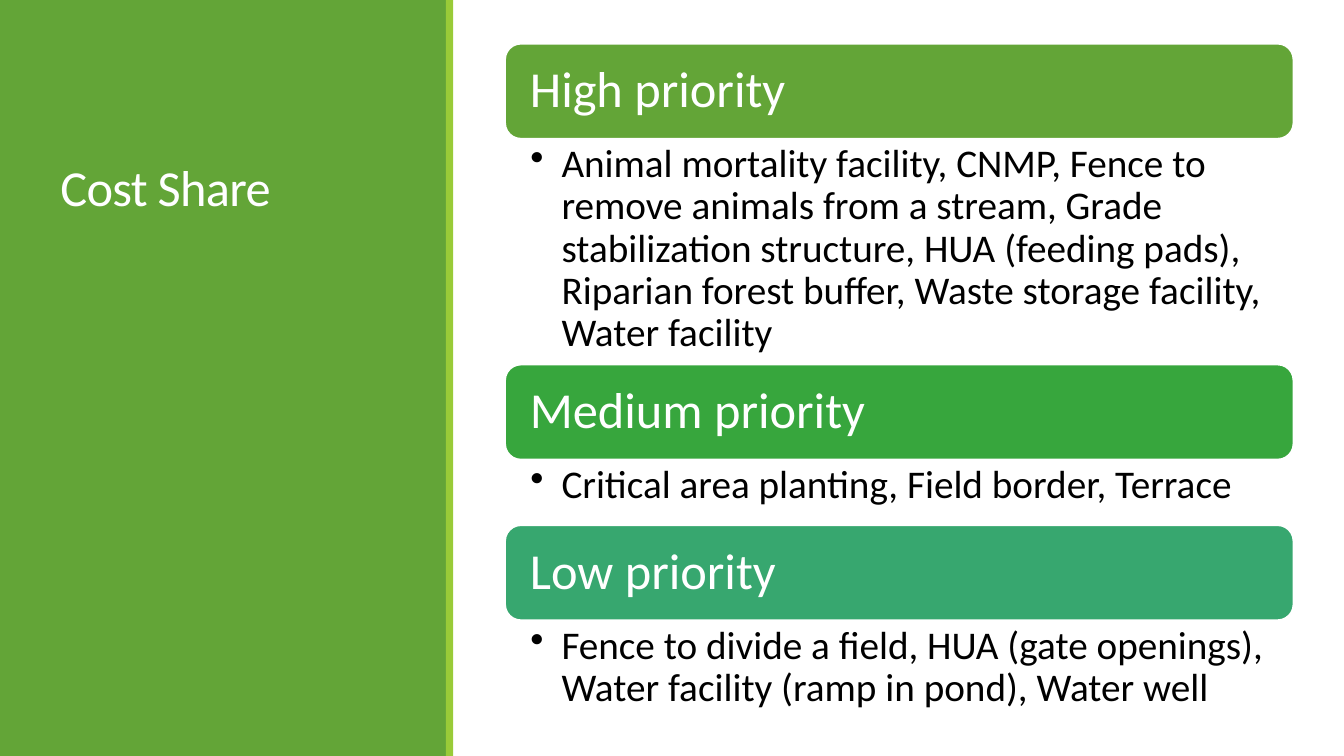
from typing import NamedTuple

from lxml import etree
from pptx import Presentation
from pptx import util as u
from pptx.dml.color import RGBColor
from pptx.enum import shapes, text
from pptx.oxml.ns import qn

WIDE, HIGH = u.Inches(13.33), u.Inches(7.5)
LEFT, SPAN = 37.58, 58.66
TOP, BAR = 5.78, 12.57
WHITE, BLACK = "FFFFFF", "000000"
GREEN, LIME = "63A537", "99CB38"


class Box(NamedTuple):
    x: float
    y: float
    w: float
    h: float


class Tier(NamedTuple):
    name: str
    items: str
    hue: str
    rows: float


class Style(NamedTuple):
    size: int
    hue: str
    lead: float
    pads: tuple[float, float, float, float]
    anchor: text.MSO_ANCHOR


MID, TOPS = text.MSO_ANCHOR.MIDDLE, text.MSO_ANCHOR.TOP
TITLE = Style(36, WHITE, 0.85, (0.1, 0.05, 0.1, 0.05), MID)
HEAD = Style(36, WHITE, 0.9, (0.2, 0.15, 0.2, 0.15), MID)
BODY = Style(28, BLACK, 0.9, (0.25, 0.05, 0.28, 0.05), TOPS)

TIERS = [
    Tier("High priority",
         "Animal mortality facility, CNMP, Fence to remove animals from a stream, "
         "Grade stabilization structure, HUA (feeding pads), Riparian forest buffer, "
         "Waste storage facility, Water facility", GREEN, 29.87),
    Tier("Medium priority",
         "Critical area planting, Field border, Terrace", "37A63D", 8.68),
    Tier("Low priority",
         "Fence to divide a field, HUA (gate openings), "
         "Water facility (ramp in pond), Water well", "37A76F", 12.8),
]


def tint(part, hue: str) -> None:
    if hasattr(part, "solid"):
        part.solid()
        part.fore_color.rgb = RGBColor.from_string(hue)
    else:
        part.color.rgb = RGBColor.from_string(hue)


def place(box: Box) -> tuple[int, int, int, int]:
    return (int(WIDE * box.x / 100), int(HIGH * box.y / 100),
            int(WIDE * box.w / 100), int(HIGH * box.h / 100))


def block(slide, box: Box, hue: str, kind=shapes.MSO_SHAPE.RECTANGLE):
    shape = slide.shapes.add_shape(kind, *place(box))
    shape.shadow.inherit = False
    tint(shape.fill, hue)
    shape.line.fill.background()
    return shape


def write(shape, words: str, style: Style):
    frame = shape.text_frame
    sides = ("left", "top", "right", "bottom")
    form = {f"margin_{s}": u.Inches(p) for s, p in zip(sides, style.pads)}
    form |= {"word_wrap": True, "vertical_anchor": style.anchor}
    for key, value in form.items():
        setattr(frame, key, value)
    para = frame.paragraphs[0]
    para.alignment = text.PP_ALIGN.LEFT
    para.line_spacing = style.lead
    run = para.add_run()
    run.text = words
    for key, value in {"name": "Calibri", "size": u.Pt(style.size)}.items():
        setattr(run.font, key, value)
    tint(run.font, style.hue)
    return para


def label(slide, box: Box, words: str, style: Style):
    return write(slide.shapes.add_textbox(*place(box)), words, style)


def bullet(para) -> None:
    props = para._p.get_or_add_pPr()
    dent = u.Inches(0.31)
    for key, value in {"marL": dent, "indent": -dent}.items():
        props.set(key, str(value))
    etree.SubElement(props, qn("a:buChar")).set("char", "•")


def stack(slide, tiers: list[Tier]) -> None:
    y = TOP
    for tier in tiers:
        bar = block(slide, Box(LEFT, y, SPAN, BAR), tier.hue,
                    shapes.MSO_SHAPE.ROUNDED_RECTANGLE)
        tint(bar.line, WHITE)
        bar.line.width = u.Pt(1.25)
        write(bar, tier.name, HEAD)
        y += BAR
        bullet(label(slide, Box(LEFT, y, SPAN, tier.rows), tier.items, BODY))
        y += tier.rows


def main() -> None:
    deck = Presentation()
    for key, value in {"slide_width": WIDE, "slide_height": HIGH}.items():
        setattr(deck, key, value)
    slide = deck.slides.add_slide(deck.slide_layouts[6])
    block(slide, Box(0, 0, 33.23, 100), GREEN)
    block(slide, Box(33.18, 0, 0.54, 100), LIME)
    title = label(slide, Box(3.75, 8.67, 26.26, 33.33), "Cost Share", TITLE)
    title.runs[0].font._element.set("spc", "-50")
    stack(slide, TIERS)
    deck.save("out.pptx")


if __name__ == "__main__":
    main()
